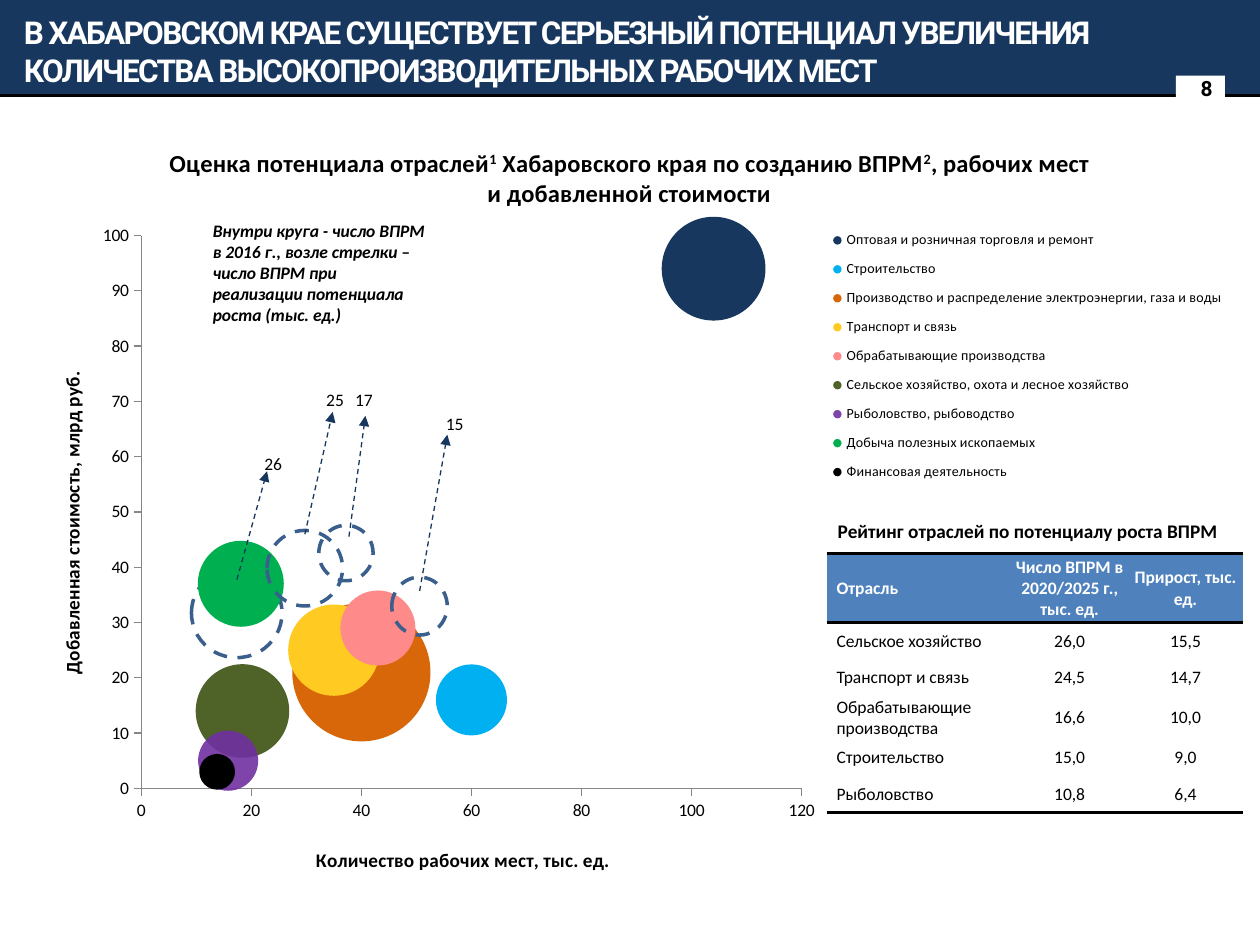
from lxml import etree
from pptx import Presentation
from pptx.chart.data import BubbleChartData
from pptx.dml.color import RGBColor
from pptx.enum.chart import XL_CHART_TYPE, XL_LEGEND_POSITION, XL_TICK_MARK
from pptx.enum.dml import MSO_LINE
from pptx.enum.shapes import MSO_CONNECTOR, MSO_SHAPE
from pptx.enum.text import MSO_ANCHOR, MSO_AUTO_SIZE, PP_ALIGN
from pptx.oxml import parse_xml
from pptx.oxml.ns import nsdecls, qn
from pptx.util import Pt

BUBBLE, LEGEND_RIGHT = XL_CHART_TYPE.BUBBLE, XL_LEGEND_POSITION.RIGHT
TICK_OUT, TICK_NONE = XL_TICK_MARK.OUTSIDE, XL_TICK_MARK.NONE
RECT, OVAL, STRAIGHT = MSO_SHAPE.RECTANGLE, MSO_SHAPE.OVAL, MSO_CONNECTOR.STRAIGHT
DASH, MIDDLE, TOP = MSO_LINE.DASH, MSO_ANCHOR.MIDDLE, MSO_ANCHOR.TOP
LEFT, CENTER, RIGHT = PP_ALIGN.LEFT, PP_ALIGN.CENTER, PP_ALIGN.RIGHT
NO_FIT, GROW = MSO_AUTO_SIZE.NONE, MSO_AUTO_SIZE.SHAPE_TO_FIT_TEXT
NO_GRID_STYLE = "{2D5ABB26-0587-4C30-8999-92F81FD0307C}"

COLORS = {
    "navy": "17375E", "ring": "3A5F8C", "header": "4F81BD", "axis": "868686",
    "white": "FFFFFF", "black": "000000", "sky": "00B0F0", "orange": "D8670A",
    "yellow": "FFCA21", "pink": "FE8A8A", "olive": "4F6228", "purple": "7030A0",
    "green": "00B050",
}

# name, jobs (x), value added (y), bubble size, colour
INDUSTRIES = [
    ("Оптовая и розничная торговля и ремонт", 104, 94, 12.8, "navy"),
    ("Строительство", 60, 16, 6, "sky"),
    ("Производство и распределение электроэнергии, газа и воды", 40, 21, 22.7, "orange"),
    ("Транспорт и связь", 35, 25, 9.9, "yellow"),
    ("Обрабатывающие производства", 43, 29, 6.7, "pink"),
    ("Сельское хозяйство, охота и лесное хозяйство", 18.4, 14, 10.4, "olive"),
    ("Рыболовство, рыбоводство", 15.8, 5, 4.3, "purple"),
    ("Добыча полезных ископаемых", 18.1, 37, 8.8, "green"),
    ("Финансовая деятельность", 13.8, 3, 1.52, "black"),
]
RATING = [
    ("Отрасль", "Число ВПРМ в 2020/2025 г., тыс. ед.", "Прирост, тыс. ед."),
    ("Сельское хозяйство", "26,0", "15,5"),
    ("Транспорт и связь", "24,5", "14,7"),
    ("Обрабатывающие производства", "16,6", "10,0"),
    ("Строительство", "15,0", "9,0"),
    ("Рыболовство", "10,8", "6,4"),
]


def rgb(name):
    return RGBColor.from_string(COLORS[name])


def write(p, text, size=10, bold=False, italic=False, color="black",
          font="Calibri", align=None, spacing=None, baseline=None):
    if align is not None:
        p.alignment = align
    r = p.add_run()
    r.text = text
    f = r.font
    f.size, f.bold, f.italic, f.name = Pt(size), bold, italic, font
    f.color.rgb = rgb(color)
    for key, value in (("spc", spacing), ("baseline", baseline)):
        if value is not None:
            r._r.get_or_add_rPr().set(key, str(value))


def place(parent, index, **fractions):
    """Give a chart part a manual layout, in fractions of the chart."""
    for old in parent.findall(qn("c:layout")):
        parent.remove(old)
    modes = "".join(f'<c:{k}Mode val="edge"/>' for k in fractions if k in "xy")
    values = "".join(f'<c:{k} val="{v}"/>' for k, v in fractions.items())
    target = '<c:layoutTarget val="inner"/>' if index == 0 else ""
    parent.insert(index, parse_xml(
        f'<c:layout {nsdecls("c")}><c:manualLayout>{target}{modes}{values}'
        '</c:manualLayout></c:layout>'))


def no_fill():
    return parse_xml(f'<c:spPr {nsdecls("c", "a")}><a:noFill/><a:ln><a:noFill/></a:ln></c:spPr>')


class Deck:
    def __init__(self, prs):
        self.s = prs.slides.add_slide(prs.slide_layouts[5])

    def title(self, text, x, y, w, h):
        sp = self.s.shapes.title
        sp.left, sp.top, sp.width, sp.height = map(Pt, (x, y, w, h))
        sp.fill.solid()
        sp.fill.fore_color.rgb = rgb("navy")
        tf = sp.text_frame
        tf.auto_size, tf.vertical_anchor, tf.word_wrap = NO_FIT, MIDDLE, True
        tf.margin_bottom = 0
        p = tf.paragraphs[0]
        p._p.get_or_add_pPr().set("marL", str(Pt(6.5)))
        write(p, text, size=18, bold=True, color="white", font="Roboto",
              align=LEFT, spacing=-100)

    def shape(self, kind, x, y, w, h, fill=None, ring=False):
        sp = self.s.shapes.add_shape(kind, *map(Pt, (x, y, w, h)))
        sp.shadow.inherit = False
        if fill:
            sp.fill.solid()
            sp.fill.fore_color.rgb = rgb(fill)
        else:
            sp.fill.background()
        if ring:
            sp.line.color.rgb = rgb("ring")
            sp.line.width, sp.line.dash_style = Pt(2), DASH
        else:
            sp.line.fill.background()
        return sp

    def line(self, x1, y1, x2, y2, color="black", width=1.5, arrow=False):
        c = self.s.shapes.add_connector(STRAIGHT, *map(Pt, (x1, y1, x2, y2)))
        c.line.color.rgb = rgb(color)
        c.line.width = Pt(width)
        if arrow:
            c.line.dash_style = DASH
            etree.SubElement(c.line._get_or_add_ln(), qn("a:tailEnd"), type="triangle")
        etree.SubElement(c._element.spPr, qn("a:effectLst"))

    def text(self, text, x, y, w, h, wrap=True, **fmt):
        tf = self.s.shapes.add_textbox(*map(Pt, (x, y, w, h))).text_frame
        tf.word_wrap, tf.auto_size, tf.vertical_anchor = wrap, GROW, TOP
        write(tf.paragraphs[0], text, **fmt)

    def axis(self, axis, title, top, step, **position):
        axis.has_major_gridlines = False
        axis.minimum_scale, axis.maximum_scale, axis.major_unit = 0, top, step
        axis.major_tick_mark, axis.minor_tick_mark = TICK_OUT, TICK_NONE
        axis.format.line.color.rgb = rgb("axis")
        axis.tick_labels.font.size = Pt(10)
        write(axis.axis_title.text_frame.paragraphs[0], title, size=11, bold=True)
        place(axis.axis_title._element, 1, **position)

    def bubbles(self, x, y, w, h):
        data = BubbleChartData()
        for name, jobs, value, size, _ in INDUSTRIES:
            data.add_series(name).add_data_point(jobs, value, size)
        chart = self.s.shapes.add_chart(BUBBLE, *map(Pt, (x, y, w, h)), data).chart
        chart.font.size, chart.font.name = Pt(10), "Calibri"
        chart.font.color.rgb = rgb("black")
        for vary in chart._chartSpace.iter(qn("c:varyColors")):
            vary.set("val", "0")
        for series, row in zip(chart.plots[0].series, INDUSTRIES):
            fill = series.format.fill
            fill.solid()
            fill.fore_color.rgb = rgb(row[4])
            series.format.line.fill.background()
            if row[4] == "purple":
                clr = series._element.find(".//" + qn("a:srgbClr"))
                etree.SubElement(clr, qn("a:alpha"), val="90000")

        # Chart title with superscript notes
        tf = chart.chart_title.text_frame
        for text, baseline in (("Оценка потенциала отраслей", None), ("1", 30000),
                               (" Хабаровского края по созданию ВПРМ", None),
                               ("2", 30000), (", рабочих мест", None)):
            write(tf.paragraphs[0], text, size=14, bold=True, baseline=baseline)
        write(tf.add_paragraph(), "и добавленной стоимости", size=14, bold=True)
        place(chart.chart_title._element, 1, x=0.12, y=0.04)

        # Axes, legend and plot area
        self.axis(chart.category_axis, "Количество рабочих мест, тыс. ед.", 120, 20,
                  x=0.24, y=0.94)
        self.axis(chart.value_axis, "Добавленная стоимость, млрд руб.", 100, 10,
                  x=0.03, y=0.33)
        chart.has_legend = True
        chart.legend.position, chart.legend.include_in_layout = LEGEND_RIGHT, False
        chart.legend.font.size = Pt(8)
        place(chart.legend._element, 1, x=0.66, y=0.14, w=0.33, h=0.35)
        body = chart._chartSpace.find(qn("c:chart"))
        plot = body.find(qn("c:plotArea"))
        place(plot, 0, x=0.1, y=0.16, w=0.54, h=0.71)
        plot.append(no_fill())
        body.addnext(no_fill())

    def table(self, rows, x, y, widths, heights):
        size = (Pt(sum(widths)), Pt(sum(heights)))
        tbl = self.s.shapes.add_table(len(rows), len(widths), Pt(x), Pt(y), *size).table
        tbl._tbl.tblPr.find(qn("a:tableStyleId")).text = NO_GRID_STYLE
        tbl.horz_banding = False
        for col, width in zip(tbl.columns, widths):
            col.width = Pt(width)
        for i, (row, values, height) in enumerate(zip(tbl.rows, rows, heights)):
            row.height = Pt(height)
            edges = ("lnT", "lnB") if i == 0 else ("lnB",) if i == len(rows) - 1 else ()
            for j, (cell, value) in enumerate(zip(row.cells, ("", *values))):
                self.cell(cell, value, i == 0, CENTER if j > 1 else LEFT, edges)

    def cell(self, cell, text, header, align, edges):
        cell.margin_left = cell.margin_right = cell.margin_top = Pt(0.75)
        cell.margin_bottom, cell.vertical_anchor = 0, MIDDLE
        for edge in edges:
            cell._tc.get_or_add_tcPr().append(parse_xml(
                f'<a:{edge} {nsdecls("a")} w="{Pt(2)}"><a:solidFill>'
                f'<a:srgbClr val="{COLORS["black"]}"/></a:solidFill></a:{edge}>'))
        cell.fill.solid()
        cell.fill.fore_color.rgb = rgb("header" if header else "white")
        p = cell.text_frame.paragraphs[0]
        if text:
            write(p, text, bold=header, color="white" if header else "black", align=align)
        else:
            etree.SubElement(p._p, qn("a:endParaRPr"), sz="1000")


def main():
    prs = Presentation()
    prs.slide_width, prs.slide_height = Pt(720), Pt(540)
    deck = Deck(prs)

    # Header band and page number
    deck.title("В ХАБАРОВСКОМ КРАЕ СУЩЕСТВУЕТ СЕРЬЕЗНЫЙ ПОТЕНЦИАЛ УВЕЛИЧЕНИЯ "
               "КОЛИЧЕСТВА ВЫСОКОПРОИЗВОДИТЕЛЬНЫХ РАБОЧИХ МЕСТ", 0, 0, 720, 54.7)
    deck.line(0, 54.7, 672, 54.7)
    deck.line(700, 54.7, 720, 54.7)
    tf = deck.shape(RECT, 672, 43.2, 28, 14.4, fill="white").text_frame
    tf.vertical_anchor = MIDDLE
    write(tf.paragraphs[0], "8", size=12, bold=True, font="Roboto", align=RIGHT)

    # Bubble chart, with one potential ring behind it and the rest in front
    deck.shape(OVAL, 109.4, 324.7, 51.8, 51.1, ring=True)
    deck.bubbles(10.8, 63.4, 699, 445)
    for box in ((152.6, 303.1, 43.2, 43.2), (223.9, 329.8, 31.7, 33.1),
                (182.2, 300.2, 31, 31.7)):
        deck.shape(OVAL, *box, ring=True)

    # Growth arrows and their values: arrow ends, then label corner
    for value, ends, corner in (
            ("17", (199.4, 306.7, 208.8, 237.6), (195.8, 218.9)),
            ("25", (174.2, 305.3, 190.1, 235.4), (179.3, 218.9)),
            ("15", (239.8, 337.7, 255.6, 248.4), (247.7, 232.6)),
            ("26", (135.4, 331.2, 152.6, 269.3), (144, 255.6))):
        deck.line(*ends, color="navy", width=0.75, arrow=True)
        deck.text(value, *corner, 25.2, 19.4, wrap=False)

    # Rating table and notes
    deck.table(RATING, 472.3, 316.1, [5, 100.8, 66.2, 66.2], [39.6] + [20.9] * 5)
    deck.text("Рейтинг отраслей по потенциалу роста ВПРМ", 471.6, 293, 238.3, 20.9,
              size=11, bold=True)
    deck.text("Внутри круга - число ВПРМ в 2016 г., возле стрелки – число ВПРМ при "
              "реализации потенциала роста (тыс. ед.)", 114.5, 122.4, 135.4, 67.7,
              bold=True, italic=True)
    prs.save("out.pptx")


if __name__ == "__main__":
    main()
